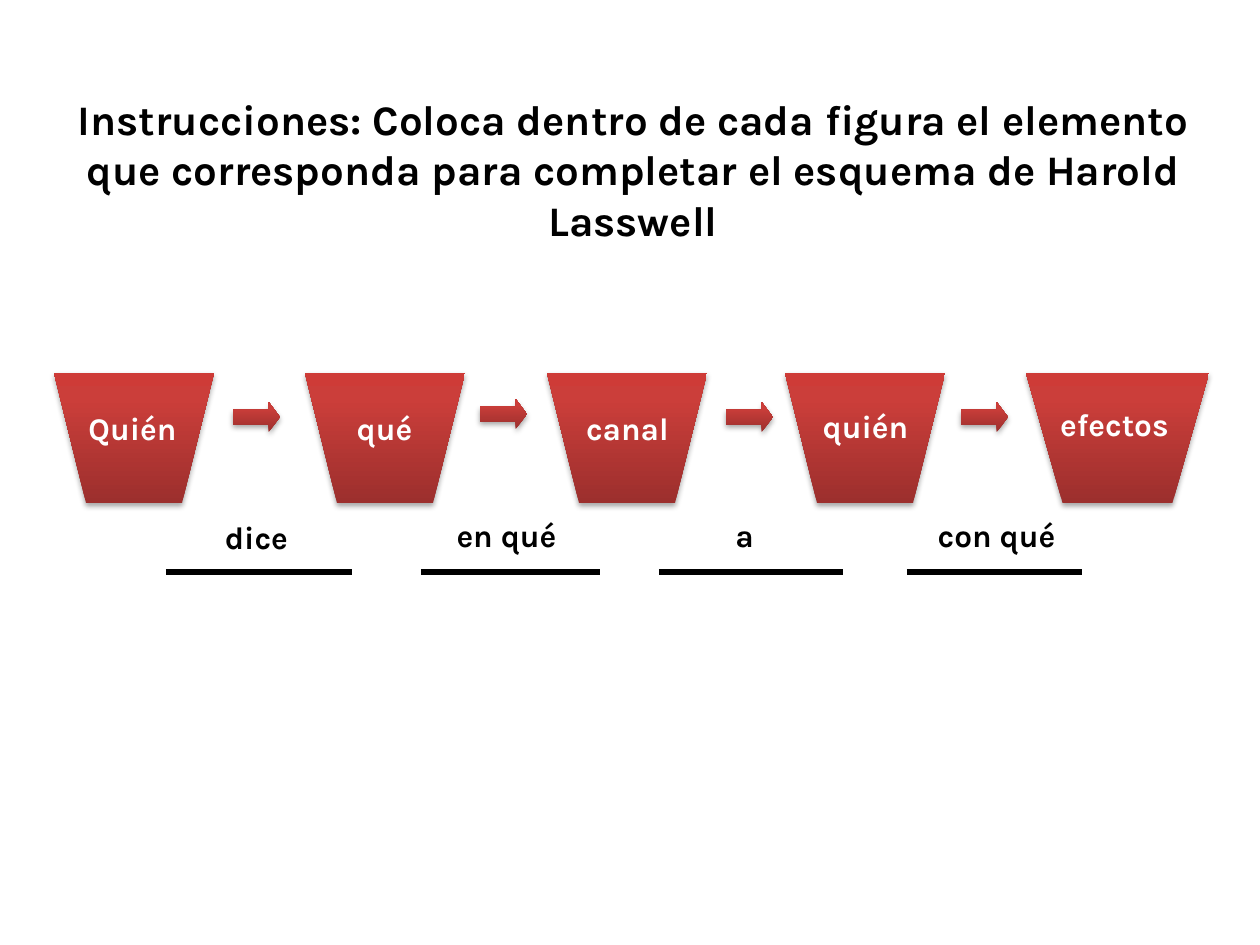
"""Build the Lasswell communication scheme slide."""
import copy

import lxml.etree
import pptx
import pptx.dml.color
import pptx.enum.dml
import pptx.enum.shapes
import pptx.enum.text
import pptx.oxml
import pptx.oxml.ns
import pptx.util

SCALE = 914400 / 126
SHAPES = pptx.enum.shapes.MSO_SHAPE
GRADIENT = [(0, "9C2F2D"), (0.8, "CB3E3A"), (1, "CE3B37")]
SHADOW = (
    f'<a:outerShdw {pptx.oxml.ns.nsdecls("a")} blurRad="40000" dist="23000" dir="5400000" rotWithShape="0">'
    '<a:srgbClr val="000000"><a:alpha val="35000"/></a:srgbClr></a:outerShdw>'
)


def color(value):
    return pptx.dml.color.RGBColor.from_string(value)


def write(box, text, size=18, fill="000000"):
    frame = box.text_frame
    frame.word_wrap = True
    frame.auto_size = pptx.enum.text.MSO_AUTO_SIZE.NONE
    frame.vertical_anchor = pptx.enum.text.MSO_ANCHOR.TOP
    para = frame.paragraphs[0]
    para.alignment = pptx.enum.text.PP_ALIGN.CENTER
    span = para.add_run()
    span.text = text
    span.font.name = "Karla"
    span.font.size = pptx.util.Pt(size)
    span.font.bold = True
    span.font.color.rgb = color(fill)


deck = pptx.Presentation()
deck.slide_width = pptx.util.Inches(10)
deck.slide_height = pptx.util.Inches(7.5)
page = deck.slides.add_slide(deck.slide_layouts[5])

title = page.shapes.title
title.left, title.top, title.width, title.height = [round(n * SCALE) for n in (62, 87, 1142, 165)]
write(
    title,
    "Instrucciones: Coloca dentro de cada figura el elemento que corresponda "
    "para completar el esquema de Harold Lasswell",
    size=24,
)

funnels = [(left, 373, width, 130) for left, width in
           [(54, 160), (305, 160), (547, 160), (785, 160), (1026, 183)]]
arrows = [(left, top, 47, 30) for left, top in
          [(233, 402), (480, 399), (726, 402), (961, 402)]]
figures = [(SHAPES.FLOWCHART_MANUAL_OPERATION, place) for place in funnels]
figures += [(SHAPES.RIGHT_ARROW, place) for place in arrows]

for kind, place in figures:
    figure = page.shapes.add_shape(kind, *[round(n * SCALE) for n in place])
    if kind == SHAPES.RIGHT_ARROW:
        figure.adjustments[0] = 0.5
        figure.adjustments[1] = 0.375
    figure.line.fill.background()
    figure.fill.gradient()
    figure.fill.gradient_angle = 90
    properties = figure._element.spPr
    stop_list = properties.find(".//" + pptx.oxml.ns.qn("a:gsLst"))
    stop_list.append(copy.deepcopy(stop_list[0]))
    for stop, (position, value) in zip(figure.fill.gradient_stops, GRADIENT):
        stop.position = position
        stop.color.rgb = color(value)
    figure.shadow.inherit = False
    effects = properties.find(pptx.oxml.ns.qn("a:effectLst"))
    effects.append(pptx.oxml.parse_xml(SHADOW))

for start, end in [(166, 352), (421, 600), (659, 843), (907, 1082)]:
    blank = page.shapes.add_connector(
        pptx.enum.shapes.MSO_CONNECTOR.STRAIGHT,
        *[round(n * SCALE) for n in (start, 572, end, 572)],
    )
    blank.line.color.rgb = color("000000")
    blank.line.width = pptx.util.Pt(3)
    lxml.etree.SubElement(blank._element.spPr, pptx.oxml.ns.qn("a:effectLst"))

labels = [
    ("Quién", 68, 403, 129, "FFFFFF"),
    ("dice", 192, 512, 129, "000000"),
    ("qué", 320, 403, 129, "FFFFFF"),
    ("en qué", 421, 510, 171, "000000"),
    ("canal", 563, 403, 129, "FFFFFF"),
    ("a", 659, 510, 171, "000000"),
    ("quién", 801, 401, 129, "FFFFFF"),
    ("con qué", 911, 510, 171, "000000"),
    ("efectos", 1042, 399, 145, "FFFFFF"),
]
for text, left, top, width, fill in labels:
    label = page.shapes.add_textbox(*[round(n * SCALE) for n in (left, top, width, 50)])
    write(label, text, fill=fill)

deck.save("out.pptx")
